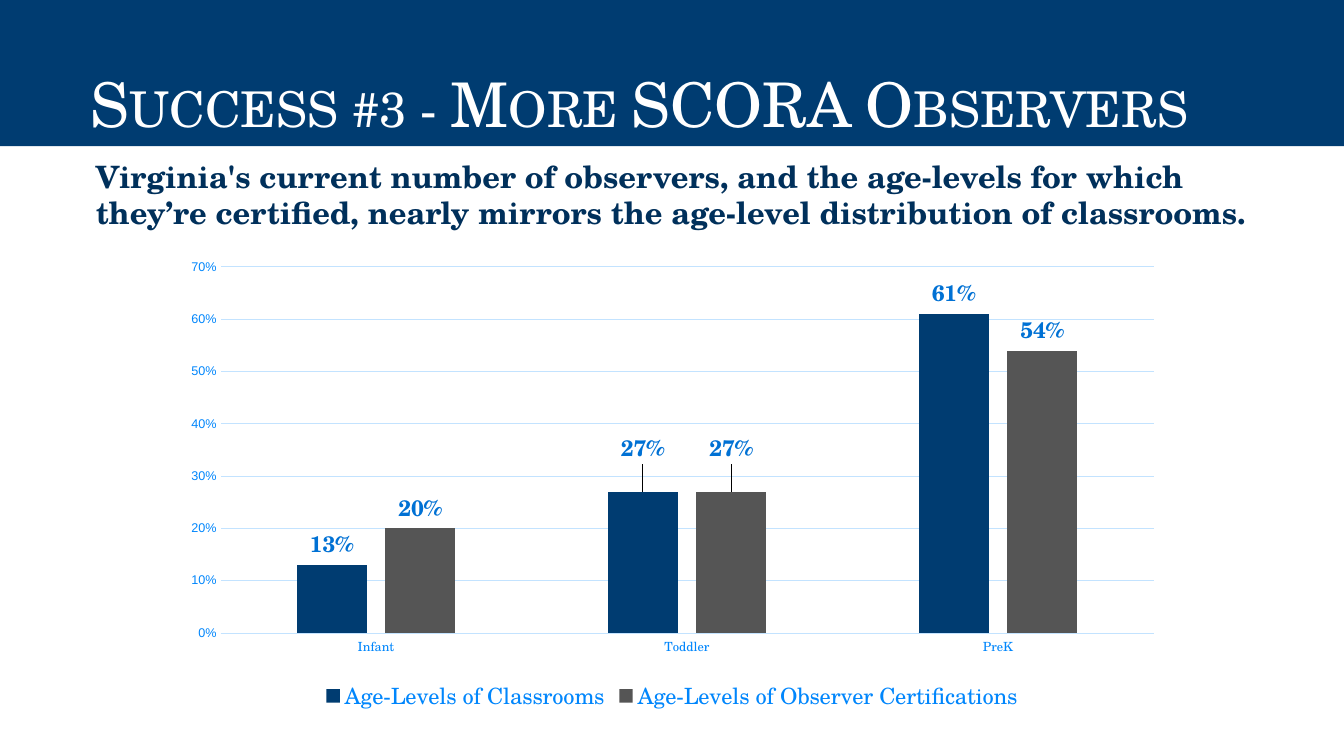
from lxml.etree import SubElement
from pptx import Presentation
from pptx.chart.data import CategoryChartData as ChartData
from pptx.dml.color import RGBColor
from pptx.enum.chart import XL_CHART_TYPE as Kind, XL_LABEL_POSITION as Spot
from pptx.enum.chart import XL_LEGEND_POSITION as Side, XL_TICK_MARK as Tick
from pptx.enum.text import MSO_ANCHOR as Anchor, MSO_AUTO_SIZE as Fit, PP_ALIGN as Align
from pptx.oxml import parse_xml
from pptx.oxml.ns import nsdecls, qn
from pptx.util import Inches, Pt

NAVY = RGBColor(0x00, 0x3C, 0x71)
INK = RGBColor(0x00, 0x30, 0x5B)
GRAY = RGBColor(0x55, 0x55, 0x55)
BLUE = RGBColor(0x00, 0x71, 0xD4)
SKY = RGBColor(0x00, 0x86, 0xFC)
PALE = RGBColor(0xC3, 0xE3, 0xFF)
WHITE = RGBColor(0xFF, 0xFF, 0xFF)
SERIF, SANS = "TeX Gyre Schola", "Arial"

LEVELS = ("Infant", "Toddler", "PreK")
SERIES = (
    ("Age-Levels of Classrooms", (0.13, 0.27, 0.61), NAVY),
    ("Age-Levels of Observer Certifications", (0.20, 0.27, 0.54), GRAY),
)
NO_LEADERS = (
    f'<c:extLst {nsdecls("c")}>'
    '<c:ext uri="{CE6537A1-D6FC-4f65-9D91-7224C49458BB}" '
    'xmlns:c15="http://schemas.microsoft.com/office/drawing/2012/chart">'
    '<c15:showLeaderLines val="0"/></c:ext></c:extLst>')


def style(font, size, color, face=SERIF, bold=False):
    font.size, font.name, font.bold = Pt(size), face, bold
    font.color.rgb = color


def write(shape, text, size, color, bold=False, caps=False, inset=0.1,
          indent=0, anchor=Anchor.TOP, spacing=1.0):
    frame = shape.text_frame
    frame.auto_size, frame.word_wrap = Fit.NONE, True
    frame.vertical_anchor = anchor
    frame.margin_left, frame.margin_right = Inches(inset), Inches(0.1)
    frame.margin_top = frame.margin_bottom = Inches(0.05)
    para = frame.paragraphs[0]
    para.alignment, para.line_spacing = Align.LEFT, spacing
    para.space_before = Pt(0)
    props = para._p.get_or_add_pPr()
    props.set("marL", str(Inches(indent)))
    props.set("indent", "0")
    SubElement(props, qn("a:buNone"))
    run = para.add_run()
    run.text = text
    style(run.font, size, color, bold=bold)
    if caps:
        run.font._element.set("cap", "small")


def place(shape, box):
    shape.left, shape.top, shape.width, shape.height = map(Inches, box)


def layout(**values):
    """Build a manual chart layout from x, y, w and h fractions."""
    inner = '<c:layoutTarget val="inner"/>' if "w" in values else ""
    if inner:
        inner += '<c:xMode val="edge"/><c:yMode val="edge"/>'
    inner += "".join(f'<c:{key} val="{val}"/>' for key, val in values.items())
    return parse_xml(f'<c:layout {nsdecls("c")}><c:manualLayout>{inner}'
                     '</c:manualLayout></c:layout>')


def add_title(slide, box):
    title = slide.shapes.title
    place(title, box)
    title.fill.solid()
    title.fill.fore_color.rgb = NAVY
    write(title, "Success #3 - More SCORA Observers", 44, WHITE, caps=True,
          inset=0.9, anchor=Anchor.BOTTOM, spacing=0.9)


def add_lead(slide, box):
    lead = slide.placeholders[1]
    place(lead, box)
    write(lead, "Virginia's current number of observers, and the age-levels "
          "for which they’re certified, nearly mirrors the age-level "
          "distribution of classrooms.", 22, INK, bold=True, indent=0.2)


def format_axes(chart):
    cats, vals = chart.category_axis, chart.value_axis
    for axis, face in ((cats, SERIF), (vals, SANS)):
        axis.major_tick_mark = axis.minor_tick_mark = Tick.NONE
        style(axis.tick_labels.font, 9, SKY, face)
    vals.minimum_scale, vals.maximum_scale, vals.major_unit = 0, 0.7, 0.1
    vals.tick_labels.number_format = "0%"
    vals.tick_labels.number_format_is_linked = False
    vals.format.line.fill.background()
    vals.has_major_gridlines = True
    for line in (cats.format.line, vals.major_gridlines.format.line):
        line.color.rgb, line.width = PALE, Pt(0.75)


def format_bars(series, color):
    series.format.fill.solid()
    series.format.fill.fore_color.rgb = color
    series.invert_if_negative = False
    labels = series.data_labels
    labels.show_value, labels.position = True, Spot.OUTSIDE_END
    labels.number_format, labels.number_format_is_linked = "0%", False
    style(labels.font, 16, BLUE, bold=True)
    # The Toddler labels sit higher than the rest, without leader lines
    label = series.points[LEVELS.index("Toddler")].data_label
    label.position = Spot.OUTSIDE_END
    style(label.font, 16, BLUE, bold=True)
    index = series._element.xpath(".//c:dLbl/c:idx")[0]
    index.addnext(layout(x=0, y=-0.05))
    labels._element.append(parse_xml(NO_LEADERS))


def add_bars(slide, box):
    data = ChartData(number_format="0%")
    data.categories = LEVELS
    for name, values, _ in SERIES:
        data.add_series(name, values)
    chart = slide.shapes.add_chart(
        Kind.COLUMN_CLUSTERED, *map(Inches, box), data).chart
    style(chart.font, 10, NAVY, SANS)
    chart.has_title = False
    chart.has_legend = True
    legend = chart.legend
    legend.position, legend.include_in_layout = Side.BOTTOM, False
    style(legend.font, 16, SKY)
    plot = chart.plots[0]
    plot.gap_width, plot.overlap, plot.vary_by_categories = 219, -27, False
    format_axes(chart)
    for series, (_, _, color) in zip(plot.series, SERIES):
        format_bars(series, color)
    area = chart._chartSpace.chart.plotArea
    for old in area.findall(qn("c:layout")):
        area.remove(old)
    area.insert(0, layout(x=0.05, y=0.03, w=0.93, h=0.79))


def main():
    deck = Presentation()
    deck.slide_width, deck.slide_height = Inches(13.33), Inches(7.5)
    slide = deck.slides.add_slide(deck.slide_layouts[1])
    add_title(slide, (0, 0, 13.33, 1.45))
    add_lead(slide, (0.65, 1.51, 12.03, 1.08))
    add_bars(slide, (1.69, 2.51, 9.95, 4.6))
    deck.save("out.pptx")


if __name__ == "__main__":
    main()
